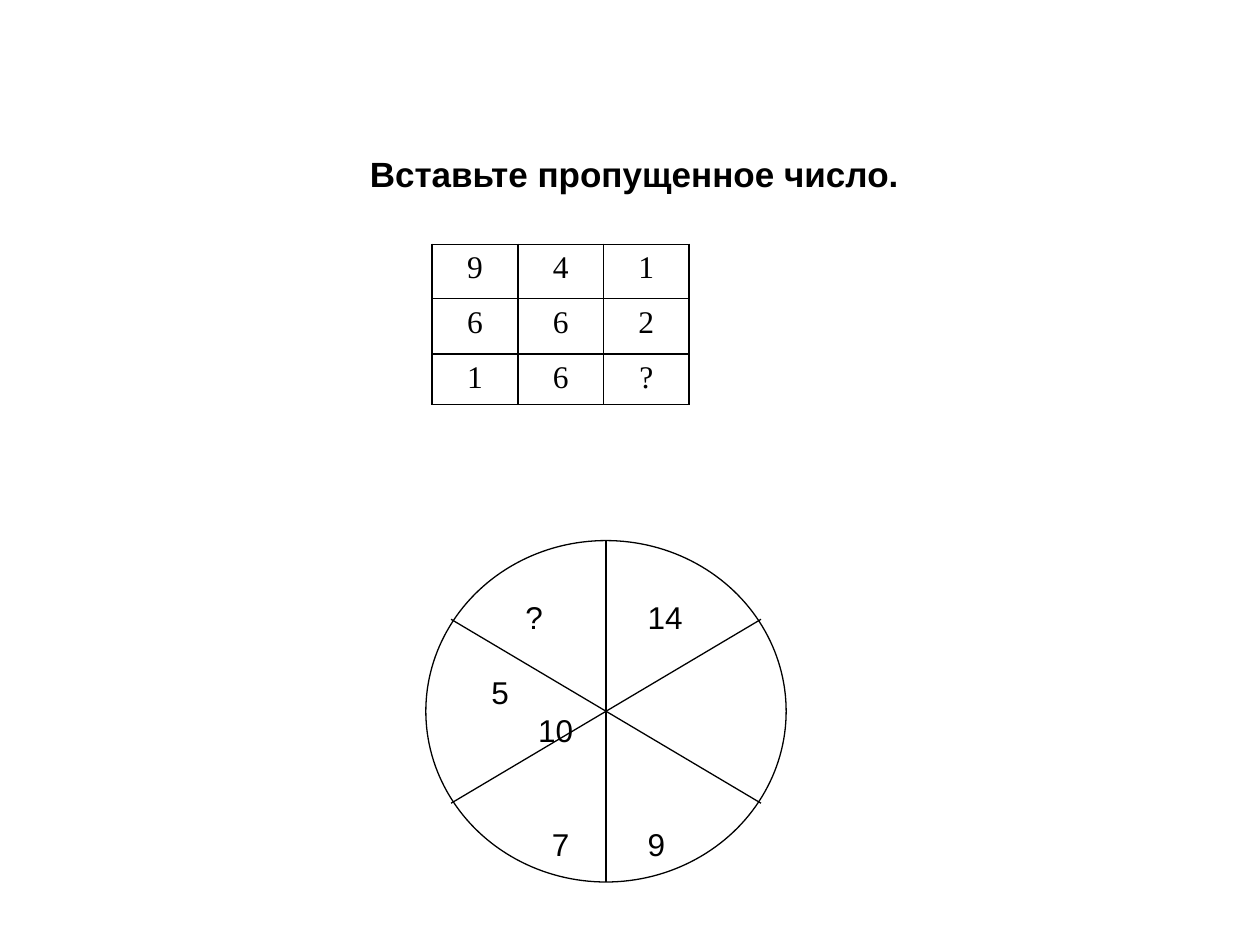
"""Build a number puzzle slide with a 3 by 3 table and a six-sector circle."""
from lxml.etree import SubElement
from pptx import Presentation
from pptx.dml.color import RGBColor
from pptx.enum.shapes import MSO_CONNECTOR, MSO_SHAPE
from pptx.enum.text import MSO_ANCHOR, PP_ALIGN
from pptx.oxml import parse_xml
from pptx.oxml.ns import nsdecls, qn
from pptx.util import Inches, Pt

BLACK = RGBColor(0, 0, 0)
WHITE = RGBColor(255, 255, 255)

TITLE = "Вставьте пропущенное число."
NUMBERS = [("9", "4", "1"), ("6", "6", "2"), ("1", "6", "?")]
ROW_HEIGHTS = (0.43, 0.44, 0.4)
COL_WIDTH = 0.68
TABLE_LEFT, TABLE_TOP = 3.43, 1.94

CENTER_X, CENTER_Y = 4.81, 5.645
RADIUS_X, RADIUS_Y = 1.43, 1.355
SPOKES = [(0, -1.355), (-1.23, -0.73), (1.23, -0.73)]
LABELS = [
    ("?", -0.57, -0.75), ("14", 0.47, -0.75),
    ("5", -0.84, -0.15), ("10", -0.4, 0.15),
    ("7", -0.36, 1.05), ("9", 0.4, 1.05),
]
LABEL_W, LABEL_H = 0.5, 0.4


def style(tf, text, size, font="Arial", bold=False):
    tf.text = text
    p = tf.paragraphs[0]
    p.alignment = PP_ALIGN.CENTER
    f = p.runs[0].font
    f.size, f.name, f.bold = Pt(size), font, bold
    f.color.rgb = BLACK


def add_text(slide, text, x, y, w, h, size, bold=False):
    tf = slide.shapes.add_textbox(*map(Inches, (x, y, w, h))).text_frame
    tf.word_wrap = True
    tf.vertical_anchor = MSO_ANCHOR.MIDDLE
    style(tf, text, size, bold=bold)


def add_borders(cell):
    tc_pr = cell._tc.get_or_add_tcPr()
    for i, side in enumerate(("lnL", "lnR", "lnT", "lnB")):
        tc_pr.insert(i, parse_xml(
            f'<a:{side} {nsdecls("a")} w="12700"><a:solidFill>'
            f'<a:srgbClr val="{BLACK}"/></a:solidFill></a:{side}>'))


def add_number_table(slide):
    cols = len(NUMBERS[0])
    table = slide.shapes.add_table(
        len(NUMBERS), cols, Inches(TABLE_LEFT), Inches(TABLE_TOP),
        Inches(cols * COL_WIDTH), Inches(sum(ROW_HEIGHTS))).table
    table.first_row = table.horz_banding = False
    for col in table.columns:
        col.width = Inches(COL_WIDTH)
    for row, height, values in zip(table.rows, ROW_HEIGHTS, NUMBERS):
        row.height = Inches(height)
        for cell, value in zip(row.cells, values):
            style(cell.text_frame, value, 18, "Times New Roman")
            cell.fill.background()
            add_borders(cell)


def add_wheel(slide):
    sp = slide.shapes.add_shape(
        MSO_SHAPE.OVAL, Inches(CENTER_X - RADIUS_X), Inches(CENTER_Y - RADIUS_Y),
        Inches(2 * RADIUS_X), Inches(2 * RADIUS_Y))
    sp.shadow.inherit = False
    sp.fill.solid()
    sp.fill.fore_color.rgb = WHITE
    sp.line.color.rgb = BLACK
    sp.line.width = Pt(0.75)
    for dx, dy in SPOKES:
        ends = (CENTER_X + dx, CENTER_Y + dy, CENTER_X - dx, CENTER_Y - dy)
        line = slide.shapes.add_connector(MSO_CONNECTOR.STRAIGHT, *map(Inches, ends))
        line.line.color.rgb = BLACK
        line.line.width = Pt(0.75)
        SubElement(line._element.spPr, qn("a:effectLst"))
    for text, dx, dy in LABELS:
        add_text(slide, text, CENTER_X + dx - LABEL_W / 2,
                 CENTER_Y + dy - LABEL_H / 2, LABEL_W, LABEL_H, 18)


def main():
    prs = Presentation()
    prs.slide_width, prs.slide_height = Inches(10), Inches(7.5)
    slide = prs.slides.add_slide(prs.slide_layouts[6])
    add_text(slide, TITLE, 0.43, 0.84, 9.21, 1.07, 20, bold=True)
    add_number_table(slide)
    add_wheel(slide)
    prs.save("out.pptx")


if __name__ == "__main__":
    main()
